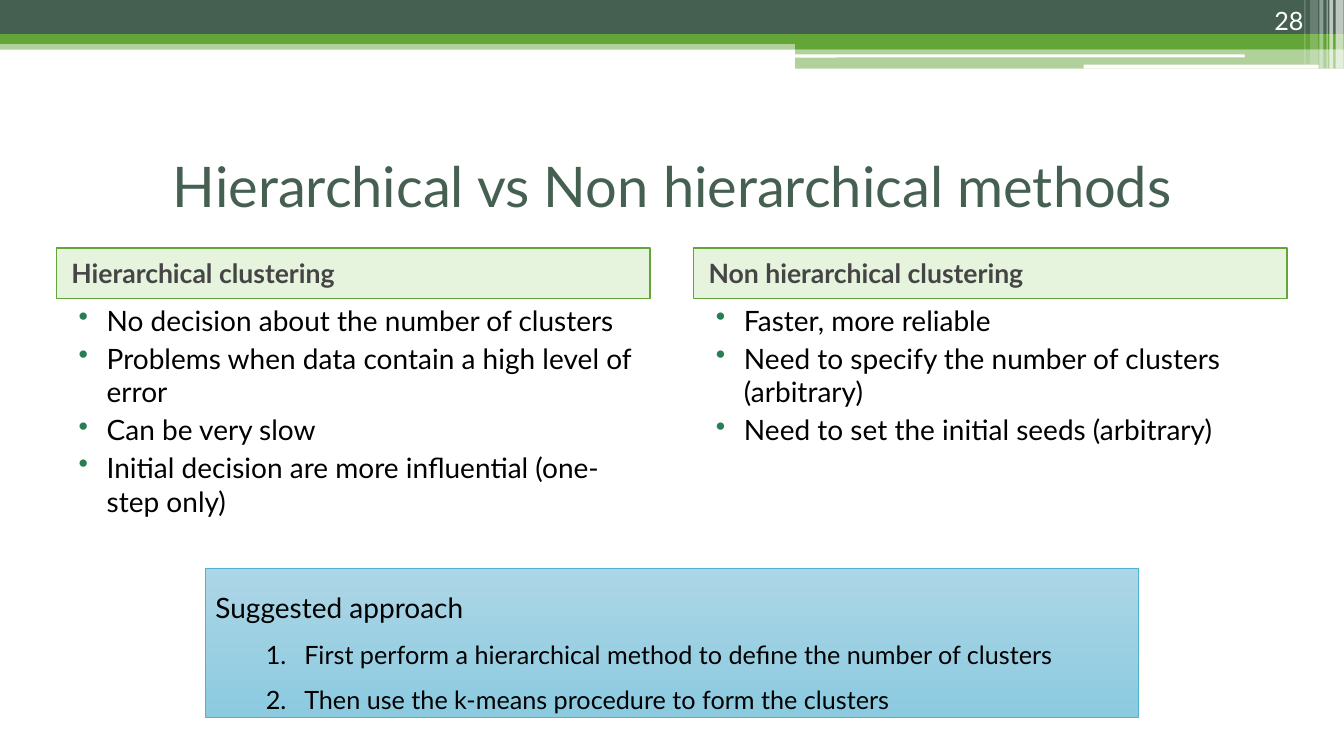
"""Build the slide comparing hierarchical and non hierarchical clustering."""
import pptx
import pptx.dml.color
import pptx.enum.shapes
import pptx.enum.text
import pptx.util
from lxml import etree
from pptx.oxml.ns import qn

Cm, Pt = pptx.util.Cm, pptx.util.Pt
RGBColor = pptx.dml.color.RGBColor
MSO_SHAPE = pptx.enum.shapes.MSO_SHAPE
ANCHOR = pptx.enum.text.MSO_ANCHOR
ALIGN = pptx.enum.text.PP_ALIGN

FONT = "Lato"
GREEN = RGBColor(0x63, 0xA5, 0x37)
DARK_GREEN = RGBColor(0x45, 0x5F, 0x51)
PALE_GREEN = RGBColor(0x9F, 0xD4, 0x7D)
BULLET_GREEN = RGBColor(0x29, 0x7D, 0x53)
GREY = RGBColor(0x45, 0x45, 0x45)
BLACK = RGBColor(0, 0, 0)
WHITE = RGBColor(255, 255, 255)
LIGHT_BLUE = RGBColor(0xAC, 0xD6, 0xE6)
MID_BLUE = RGBColor(0x8C, 0xCA, 0xE0)
EDGE_BLUE = RGBColor(0x4E, 0xB3, 0xCF)

TITLE = "Hierarchical vs Non hierarchical methods"
PAGE = "28"
COLUMNS = [
    ("Hierarchical clustering", [
        "No decision about the number of clusters",
        "Problems when data contain a high level of error",
        "Can be very slow",
        "Initial decision are more influential (one-step only)",
    ]),
    ("Non hierarchical clustering", [
        "Faster, more reliable",
        "Need to specify the number of clusters (arbitrary)",
        "Need to set the initial seeds (arbitrary)",
    ]),
]
APPROACH = "Suggested approach"
STEPS = [
    "First perform a hierarchical method to define the number of clusters",
    "Then use the k-means procedure to form the clusters",
]

WIDTH, HEIGHT = 33.87, 19.05
BANDS = [
    ((0, 1.02, WIDTH, 0.23), GREEN, 50),
    ((0, 0, WIDTH, 0.86), DARK_GREEN, 100),
    ((0, 0.86, WIDTH, 0.25), GREEN, 100),
    ((20.04, 0.99, 13.83, 0.25), GREEN, 100),
    ((20.04, 1.22, 13.83, 0.51), GREEN, 50),
]
SLITS = [(20.02, 1.37, 11.35, 0.08), (27.31, 1.63, 5.92, 0.1)]
STRIPES = [
    (33.66, 0.2, 1.73, 65),
    (33.5, 0.1, 1.73, 65),
    (33.43, 0.03, 1.73, 60),
    (33.25, 0.1, 1.73, 40),
    (33.02, 0.2, 1.63, 20),
    (32.87, 0.03, 1.63, 30),
]
MARGIN, COLUMN_W, COLUMN_STEP = 1.42, 14.96, 16.06
HEAD_TOP, HEAD_H, LIST_H = 6.25, 1.27, 10.8

prs = pptx.Presentation()
prs.slide_width, prs.slide_height = Cm(WIDTH), Cm(HEIGHT)
s = prs.slides.add_slide(prs.slide_layouts[6])


def add_box(box, color=None, alpha=100, kind=MSO_SHAPE.RECTANGLE):
    sp = s.shapes.add_shape(kind, *map(Cm, box))
    sp.shadow.inherit = False
    sp.line.fill.background()
    if color is not None:
        sp.fill.solid()
        sp.fill.fore_color.rgb = color
        if alpha < 100:
            clr = sp.fill._xPr.find(".//" + qn("a:srgbClr"))
            etree.SubElement(clr, qn("a:alpha"), val=str(alpha * 1000))
    return sp


def add_text(box):
    return s.shapes.add_textbox(*map(Cm, box))


def write(sp, lines, size, color, align=ALIGN.LEFT, anchor=ANCHOR.TOP, bold=False):
    tf = sp.text_frame
    tf.word_wrap = True
    tf.vertical_anchor = anchor
    tf.text = "\n".join(lines)
    for p in tf.paragraphs:
        p.alignment = align
        p.font.name, p.font.size, p.font.bold = FONT, Pt(size), bold
        p.font.color.rgb = color
    return tf.paragraphs


def indent(p, left, first=0):
    pPr = p._p.get_or_add_pPr()
    pPr.set("marL", str(Cm(left)))
    pPr.set("indent", str(Cm(first)))
    return pPr


def add_mark(pPr, tag, **attrs):
    mark = etree.Element(qn(tag), **attrs)
    pPr.find(qn("a:defRPr")).addprevious(mark)
    return mark


for box, color, alpha in BANDS:
    add_box(box, color, alpha)
for box in SLITS:
    add_box(box, WHITE, kind=MSO_SHAPE.ROUNDED_RECTANGLE)
for left, width, height, alpha in STRIPES:
    add_box((left, 0, width, height), WHITE, alpha)

write(add_text((MARGIN, 3.18, 31.04, 2.97)), [TITLE], 40, DARK_GREEN,
      ALIGN.CENTER, ANCHOR.MIDDLE)

for i, (heading, points) in enumerate(COLUMNS):
    left = MARGIN + i * COLUMN_STEP
    head = add_box((left, HEAD_TOP, COLUMN_W, HEAD_H), PALE_GREEN, 25)
    head.line.color.rgb, head.line.width = GREEN, Pt(1)
    for p in write(head, [heading], 19, GREY, anchor=ANCHOR.MIDDLE, bold=True):
        p.space_before = Pt(3)
        indent(p, 0.13)
    body = add_text((left, HEAD_TOP + HEAD_H, COLUMN_W, LIST_H))
    for p in write(body, points, 20, BLACK):
        p.space_before = Pt(3)
        pPr = indent(p, 1.02, -0.71)
        etree.SubElement(add_mark(pPr, "a:buClr"), qn("a:srgbClr"), val=str(BULLET_GREEN))
        add_mark(pPr, "a:buChar", char="•")

write(add_text((30.28, 0, 2.82, 1.02)), [PAGE], 18, WHITE, ALIGN.RIGHT, ANCHOR.BOTTOM)

panel = add_box((5.18, 14.33, 23.5, 3.76))
panel.fill.gradient()
panel.fill.gradient_angle = 270
for stop, color in zip(panel.fill.gradient_stops, (LIGHT_BLUE, MID_BLUE)):
    stop.color.rgb = color
panel.line.color.rgb, panel.line.width = EDGE_BLUE, Pt(0.5)
lead, *steps = write(panel, [APPROACH, *STEPS], 20, BLACK)
panel.text_frame.auto_size = pptx.enum.text.MSO_AUTO_SIZE.SHAPE_TO_FIT_TEXT
lead.line_spacing = 1.5
for p in steps:
    p.level, p.line_spacing, p.font.size = 1, 1.5, Pt(18)
    add_mark(indent(p, 2.24, -0.97), "a:buAutoNum", type="arabicPeriod")

prs.save("out.pptx")
